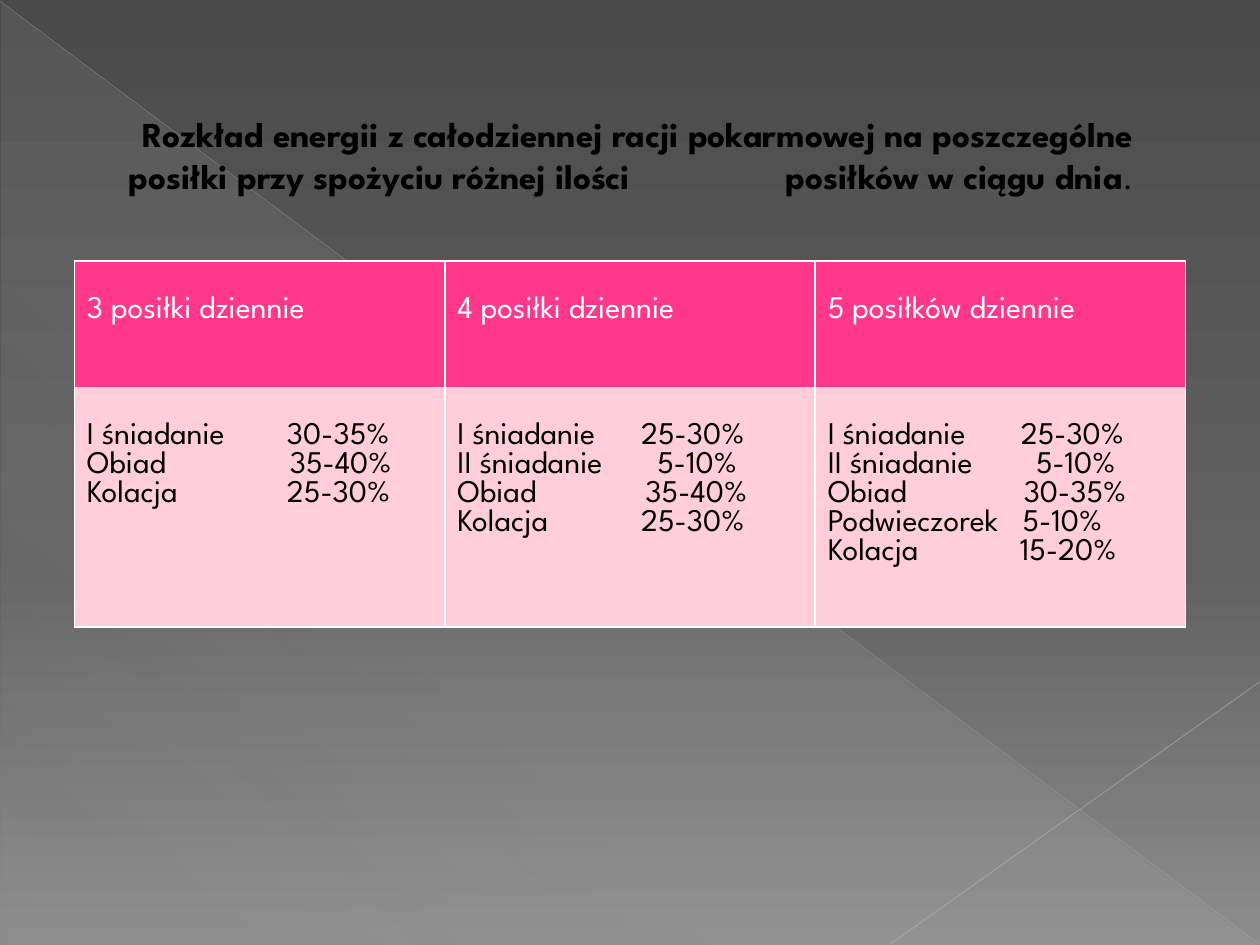
"""Build a slide on how daily energy is split between three, four or five meals."""
from typing import NamedTuple

import lxml.etree
import pptx
import pptx.dml.color
import pptx.enum.shapes
import pptx.enum.text
import pptx.oxml.ns
import pptx.oxml.xmlchemy
import pptx.util

Pt = pptx.util.Pt
RGBColor = pptx.dml.color.RGBColor
OxmlElement = pptx.oxml.xmlchemy.OxmlElement
qn = pptx.oxml.ns.qn

FONT = "League Spartan"
BLACK = RGBColor(0x00, 0x00, 0x00)
WHITE = RGBColor(0xFF, 0xFF, 0xFF)
PINK = RGBColor(0xFF, 0x38, 0x8C)
PALE_PINK = RGBColor(0xFF, 0xCE, 0xDA)
DARK_GREY = RGBColor(0x4A, 0x4A, 0x4A)
MID_GREY = RGBColor(0x62, 0x62, 0x62)
LIGHT_GREY = RGBColor(0x8C, 0x8C, 0x8C)
SHEEN = RGBColor(0xD2, 0xD2, 0xD2)
FALLING_GREY = RGBColor(0xBF, 0xBF, 0xBF)
RISING_GREY = RGBColor(0xC6, 0xC6, 0xC6)


class Stop(NamedTuple):
    position: int
    color: RGBColor
    opacity: int = 100


class Ray(NamedTuple):
    start: tuple[float, float]
    end: tuple[float, float]
    color: RGBColor
    width: float
    opacity: int


class Meal(NamedTuple):
    name: str
    share: str
    tab: float


class Plan(NamedTuple):
    heading: str
    meals: list[Meal]


RAYS = [
    Ray((0, 0.7), (719.3, 539.3), FALLING_GREY, 0.39, 35),
    Ray((720, 389.5), (509, 539.3), RISING_GREY, 0.47, 45),
]
PLANS = [
    Plan("3 posiłki dziennie", [
        Meal("I śniadanie", "30-35%", 114.3),
        Meal("Obiad", "35-40%", 116),
        Meal("Kolacja", "25-30%", 114.3),
    ]),
    Plan("4 posiłki dziennie", [
        Meal("I śniadanie", "25-30%", 105),
        Meal("II śniadanie", "5-10%", 114.3),
        Meal("Obiad", "35-40%", 107.5),
        Meal("Kolacja", "25-30%", 105),
    ]),
    Plan("5 posiłków dziennie", [
        Meal("I śniadanie", "25-30%", 110.3),
        Meal("II śniadanie", "5-10%", 119),
        Meal("Obiad", "30-35%", 112),
        Meal("Podwieczorek", "5-10%", 111.4),
        Meal("Kolacja", "15-20%", 109.8),
    ]),
]


def add_opacity(color_element, opacity: int) -> None:
    """Make a colour element partly transparent."""
    lxml.etree.SubElement(color_element, qn("a:alpha"), val=str(opacity * 1000))


def set_gradient(properties, stops: list[Stop], angle: int) -> None:
    """Replace the solid fill of a properties element by a linear gradient."""
    gradient = OxmlElement("a:gradFill")
    gradient.set("rotWithShape", "1")
    stop_list = lxml.etree.SubElement(gradient, qn("a:gsLst"))
    for stop in stops:
        mark = lxml.etree.SubElement(stop_list, qn("a:gs"), pos=str(stop.position * 1000))
        color = lxml.etree.SubElement(mark, qn("a:srgbClr"), val=str(stop.color))
        if stop.opacity < 100:
            add_opacity(color, stop.opacity)
    lxml.etree.SubElement(gradient, qn("a:lin"), ang=str(angle * 60000), scaled="0")
    properties.replace(properties.find(qn("a:solidFill")), gradient)


def add_backdrop(slide) -> None:
    """Shade the background and lay the pale triangle over it."""
    slide.background.fill.solid()
    slide.background.fill.fore_color.rgb = DARK_GREY
    set_gradient(slide.element.find(".//" + qn("p:bgPr")),
                 [Stop(0, DARK_GREY), Stop(60, MID_GREY), Stop(100, LIGHT_GREY)], 90)
    triangle = slide.shapes.add_shape(
        pptx.enum.shapes.MSO_SHAPE.RIGHT_TRIANGLE, Pt(0.7), Pt(1.4), Pt(718.6), Pt(538.6))
    triangle.shadow.inherit = False
    triangle.line.fill.background()
    triangle.fill.solid()
    set_gradient(triangle.element.spPr,
                 [Stop(0, SHEEN, 10), Stop(70, SHEEN, 8), Stop(100, SHEEN, 1)], 133)


def add_ray(slide, ray: Ray) -> None:
    """Draw one faint line across the background."""
    line = slide.shapes.add_connector(
        pptx.enum.shapes.MSO_CONNECTOR.STRAIGHT, *map(Pt, ray.start + ray.end))
    line.line.width = Pt(ray.width)
    line.line.color.rgb = ray.color
    properties = line.element.spPr
    add_opacity(properties.find(".//" + qn("a:srgbClr")), ray.opacity)
    lxml.etree.SubElement(properties, qn("a:effectLst"))


def add_tab(paragraph, position: float) -> None:
    """Give a paragraph without other properties one left tab stop."""
    tabs = OxmlElement("a:tabLst")
    lxml.etree.SubElement(tabs, qn("a:tab"), pos=str(int(Pt(position))), algn="l")
    paragraph._p.get_or_add_pPr().insert(0, tabs)


def style_text(paragraph, size: int, color: RGBColor, bold: bool = False) -> None:
    """Set the font of a whole paragraph."""
    paragraph.font.name = FONT
    paragraph.font.size = Pt(size)
    paragraph.font.color.rgb = color
    paragraph.font.bold = bold


def add_title(slide) -> None:
    """Write the two-line title."""
    frame = slide.shapes.add_textbox(Pt(73.7), Pt(60.5), Pt(581.8), Pt(56)).text_frame
    frame.word_wrap = True
    frame.margin_left = frame.margin_right = 0
    opening, closing = frame.paragraphs[0], frame.add_paragraph()
    opening.text = "Rozkład energii z całodziennej racji pokarmowej na poszczególne"
    opening.alignment = pptx.enum.text.PP_ALIGN.CENTER
    closing.text = "posiłki przy spożyciu różnej ilości\tposiłków w ciągu dnia"
    add_tab(closing, 375.4)
    for line in (opening, closing):
        line.line_spacing = Pt(24)
        style_text(line, 20, BLACK, bold=True)
    full_stop = closing.add_run()
    full_stop.text = "."
    full_stop.font.size = Pt(18)
    full_stop.font.bold = False


def style_cell(cell, fill: RGBColor, hidden_side: str) -> None:
    """Fill a cell and border it in white on all sides but one."""
    cell.fill.solid()
    cell.fill.fore_color.rgb = fill
    cell.margin_top = Pt(20.2)
    properties = cell._tc.get_or_add_tcPr()
    for index, side in enumerate(("lnL", "lnR", "lnT", "lnB")):
        border = OxmlElement(f"a:{side}")
        border.set("w", str(int(Pt(1))))
        if side == hidden_side:
            lxml.etree.SubElement(border, qn("a:noFill"))
        else:
            paint = lxml.etree.SubElement(border, qn("a:solidFill"))
            lxml.etree.SubElement(paint, qn("a:srgbClr"), val=str(WHITE))
        properties.insert(index, border)


def add_plans(slide, plans: list[Plan]) -> None:
    """Draw the table with one column for each meal plan."""
    table = slide.shapes.add_table(
        2, len(plans), Pt(42.5), Pt(149.2), Pt(635), Pt(209.1)).table
    table.rows[0].height = Pt(72)
    table.rows[1].height = Pt(137.1)
    for column, plan in enumerate(plans):
        heading, body = table.cell(0, column), table.cell(1, column)
        style_cell(heading, PINK, "lnB")
        style_cell(body, PALE_PINK, "lnT")
        heading.text = plan.heading
        style_text(heading.text_frame.paragraphs[0], 18, WHITE)
        body.text = "\n".join(f"{meal.name}\t{meal.share}" for meal in plan.meals)
        for paragraph, meal in zip(body.text_frame.paragraphs, plan.meals):
            add_tab(paragraph, meal.tab)
            style_text(paragraph, 18, BLACK)


def main() -> None:
    """Build and save the presentation."""
    presentation = pptx.Presentation()
    presentation.slide_width, presentation.slide_height = Pt(720), Pt(540)
    slide = presentation.slides.add_slide(presentation.slide_layouts[6])
    add_backdrop(slide)
    for ray in RAYS:
        add_ray(slide, ray)
    add_title(slide)
    add_plans(slide, PLANS)
    presentation.save("out.pptx")


if __name__ == "__main__":
    main()
